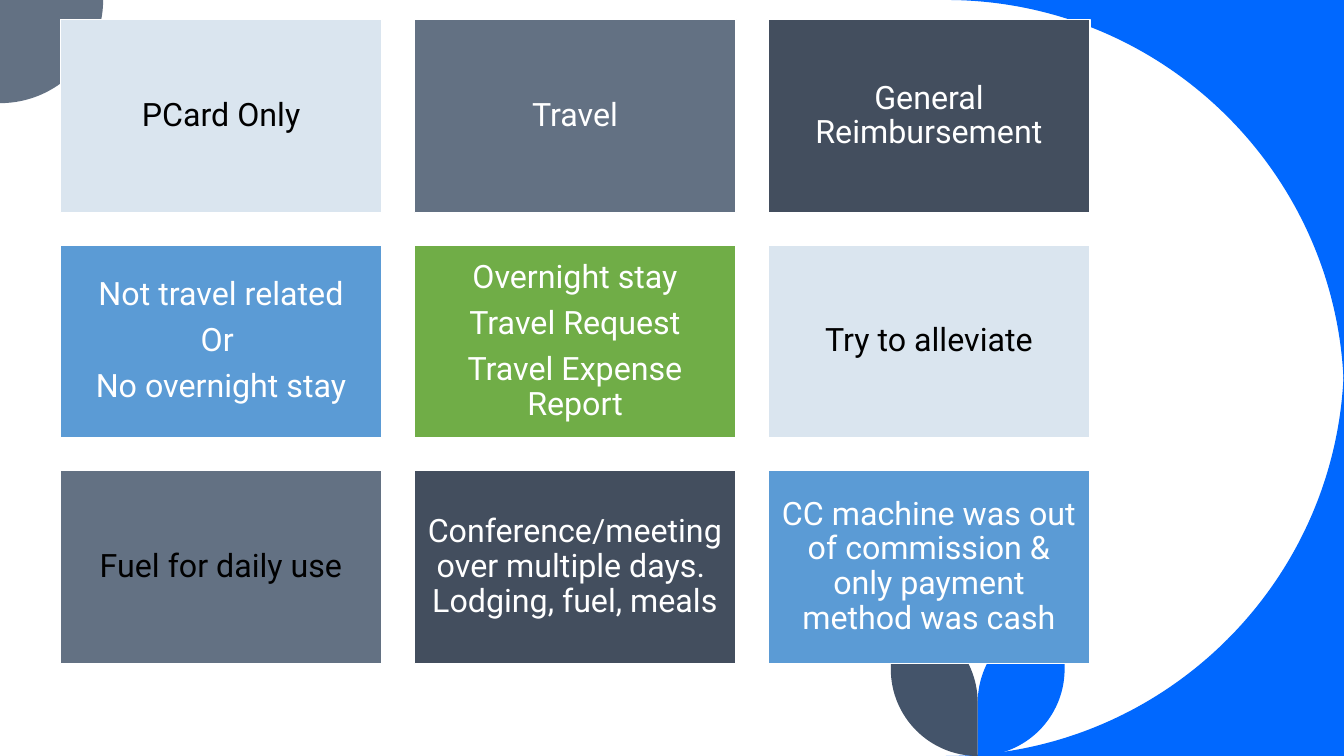
from lxml.etree import SubElement
from pptx import Presentation
from pptx.dml.color import RGBColor
from pptx.enum.shapes import MSO_SHAPE
from pptx.enum.text import MSO_ANCHOR, PP_ALIGN
from pptx.oxml.ns import qn
from pptx.util import Cm, Pt

FONT, SIZE = "Roboto", 23
BLACK, WHITE = "000000", "FFFFFF"
PALE, SLATE, NAVY = "DAE5EF", "637183", "434E5E"
SKY, GREEN, BLUE, INK = "5B9BD5", "70AD47", "0068FF", "44546A"

# Tiles row by row: paragraphs, fill, text colour
TILES = [
    [(["PCard Only"], PALE, BLACK),
     (["Travel"], SLATE, WHITE),
     (["General Reimbursement"], NAVY, WHITE)],
    [(["Not travel related", "Or ", "No overnight stay"], SKY, WHITE),
     (["Overnight stay", "Travel Request", "Travel Expense Report"], GREEN, WHITE),
     (["Try to alleviate"], PALE, BLACK)],
    [(["Fuel for daily use"], SLATE, BLACK),
     (["Conference/meeting over multiple days.  Lodging, fuel, meals"], NAVY, WHITE),
     (["CC machine was out of commission & only payment method was cash"], SKY, WHITE)],
]

# Lengths in cm
SLIDE_W, SLIDE_H = 33.87, 19.05
LEFT, TOP, TILE_W, TILE_H, GAP = 1.52, 0.49, 8.11, 4.87, 0.81
CORNER_R, DISC_R, LEAF_R = 10.03, 2.6, 2.19
LEAF_X, LEAF_TOP = 24.64, 15.52  # line where the two leaves meet, and their top
CORNER_X = SLIDE_W - CORNER_R

# Outlines: points with the way the segment to each one sets off
# ("line", or a quarter circle starting "across" or "down")
TOP_CORNER = [(SLIDE_W, 0, "line"), (CORNER_X, 0, "line"), (SLIDE_W, CORNER_R, "across")]
BOTTOM_CORNER = [(SLIDE_W, SLIDE_H - CORNER_R, "line"), (CORNER_X, SLIDE_H, "down"),
                 (SLIDE_W, SLIDE_H, "line")]
DISC = [(0, 0, "line"), (DISC_R, 0, "line"), (0, DISC_R, "down")]
LEAF = [(LEAF_X - LEAF_R, LEAF_TOP, "line"),
        (LEAF_X - LEAF_R, SLIDE_H - LEAF_R, "line"),
        (LEAF_X, SLIDE_H, "down"),
        (LEAF_X, LEAF_TOP + LEAF_R, "line"),
        (LEAF_X - LEAF_R, LEAF_TOP, "down")]
MIRRORED_LEAF = [(2 * LEAF_X - x, y, kind) for x, y, kind in LEAF]
OUTLINES = [(TOP_CORNER, BLUE), (BOTTOM_CORNER, BLUE), (DISC, SLATE),
            (MIRRORED_LEAF, BLUE), (LEAF, INK)]
ROUND = 0.5523  # Bezier handle length for a quarter circle


def color(value):
    return RGBColor.from_string(value)


def style(s, fill):
    s.shadow.inherit = False
    s.fill.solid()
    s.fill.fore_color.rgb = color(fill)


def bend(segment, start, end, kind):
    """Turn a straight path segment into a quarter circle."""
    corner = (end[0], start[1]) if kind == "across" else (start[0], end[1])
    handles = [[round(a + ROUND * (c - a)) for a, c in zip(point, corner)]
               for point in (start, end)]
    segment.tag = qn("a:cubicBezTo")
    for child in list(segment):
        segment.remove(child)
    for x, y in handles + [end]:
        SubElement(segment, qn("a:pt"), x=str(x), y=str(y))


def add_outline(shapes, outline, fill):
    points = [(Cm(x), Cm(y)) for x, y, _ in outline]
    builder = shapes.build_freeform(*points[0])
    builder.add_line_segments(points[1:], close=True)
    s = builder.convert_to_shape()
    style(s, fill)
    s.line.fill.background()
    local = [(x - s.left, y - s.top) for x, y in points]
    segments = s._element.findall(".//" + qn("a:lnTo"))
    for i, segment in enumerate(segments, 1):
        kind = outline[i][2]
        if kind != "line":
            bend(segment, local[i - 1], local[i], kind)


def add_tile(shapes, x, y, paragraphs, fill, text_color):
    s = shapes.add_shape(MSO_SHAPE.RECTANGLE, Cm(x), Cm(y), Cm(TILE_W), Cm(TILE_H))
    style(s, fill)
    s.line.color.rgb = color(WHITE)
    s.line.width = Pt(1)
    tf = s.text_frame
    tf.word_wrap = True
    tf.vertical_anchor = MSO_ANCHOR.MIDDLE
    tf.margin_left = tf.margin_right = tf.margin_top = tf.margin_bottom = Cm(0.25)
    tf.text = "\n".join(paragraphs)
    for p in tf.paragraphs:
        p.alignment = PP_ALIGN.CENTER
        p.line_spacing = 0.9
        p.space_after = Pt(8)
        for r in p.runs:
            r.font.name = FONT
            r.font.size = Pt(SIZE)
            r.font.color.rgb = color(text_color)


def main():
    prs = Presentation()
    prs.slide_width, prs.slide_height = Cm(SLIDE_W), Cm(SLIDE_H)
    shapes = prs.slides.add_slide(prs.slide_layouts[6]).shapes

    # Corners, disc and leaves
    for outline, fill in OUTLINES:
        add_outline(shapes, outline, fill)

    # Grid of tiles
    for row, tiles in enumerate(TILES):
        for col, tile in enumerate(tiles):
            x = LEFT + col * (TILE_W + GAP)
            y = TOP + row * (TILE_H + GAP)
            add_tile(shapes, x, y, *tile)

    prs.save("out.pptx")


if __name__ == "__main__":
    main()
